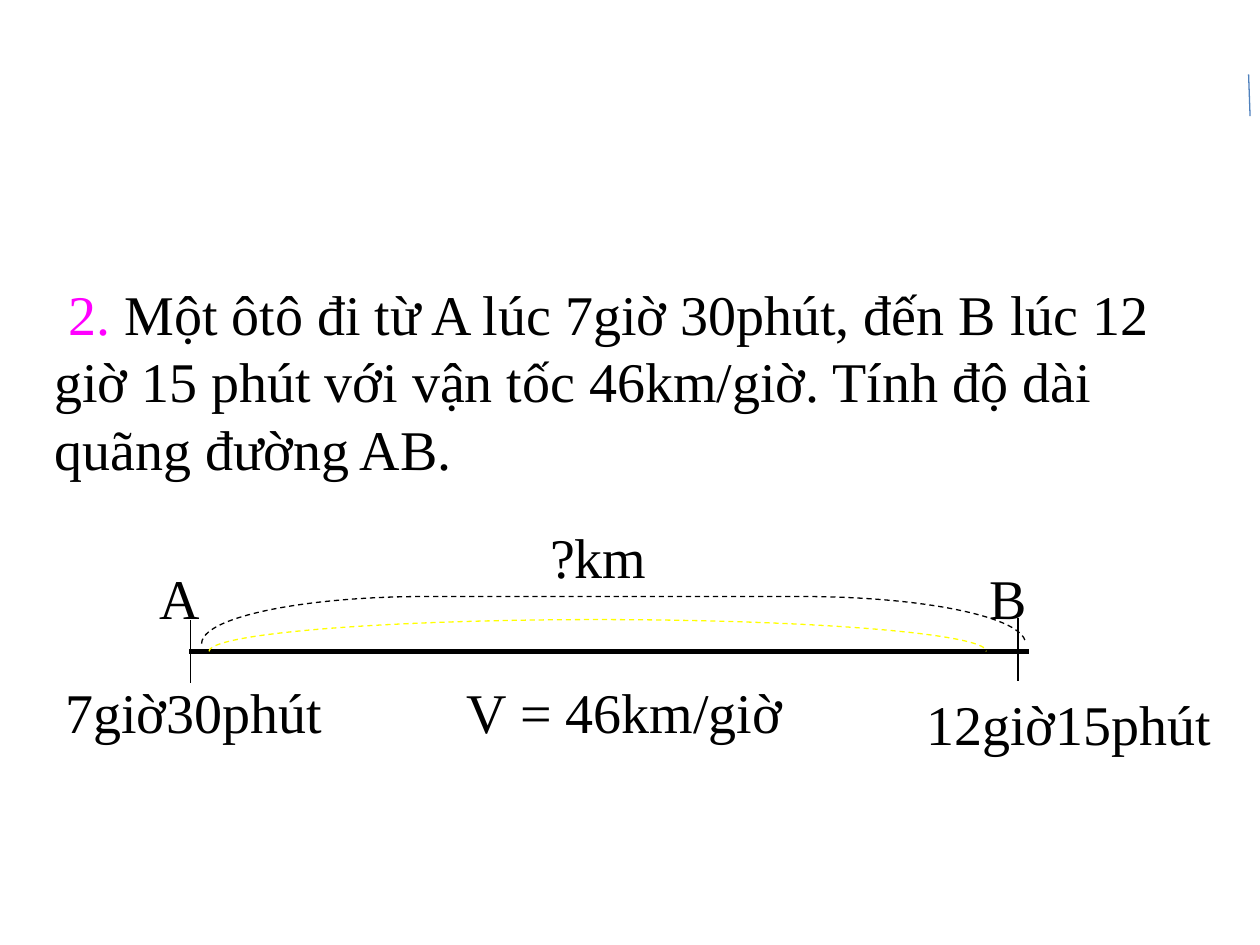
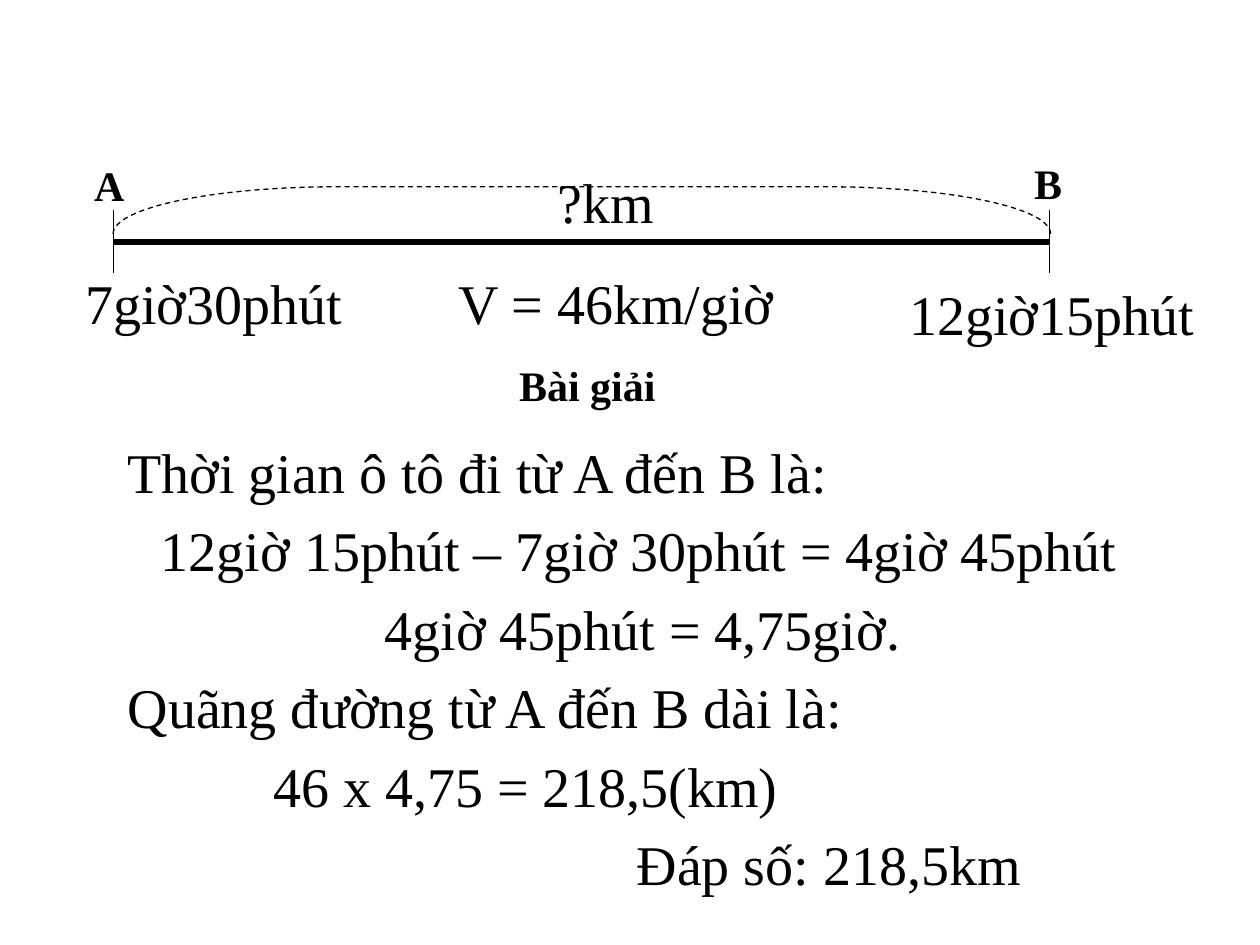
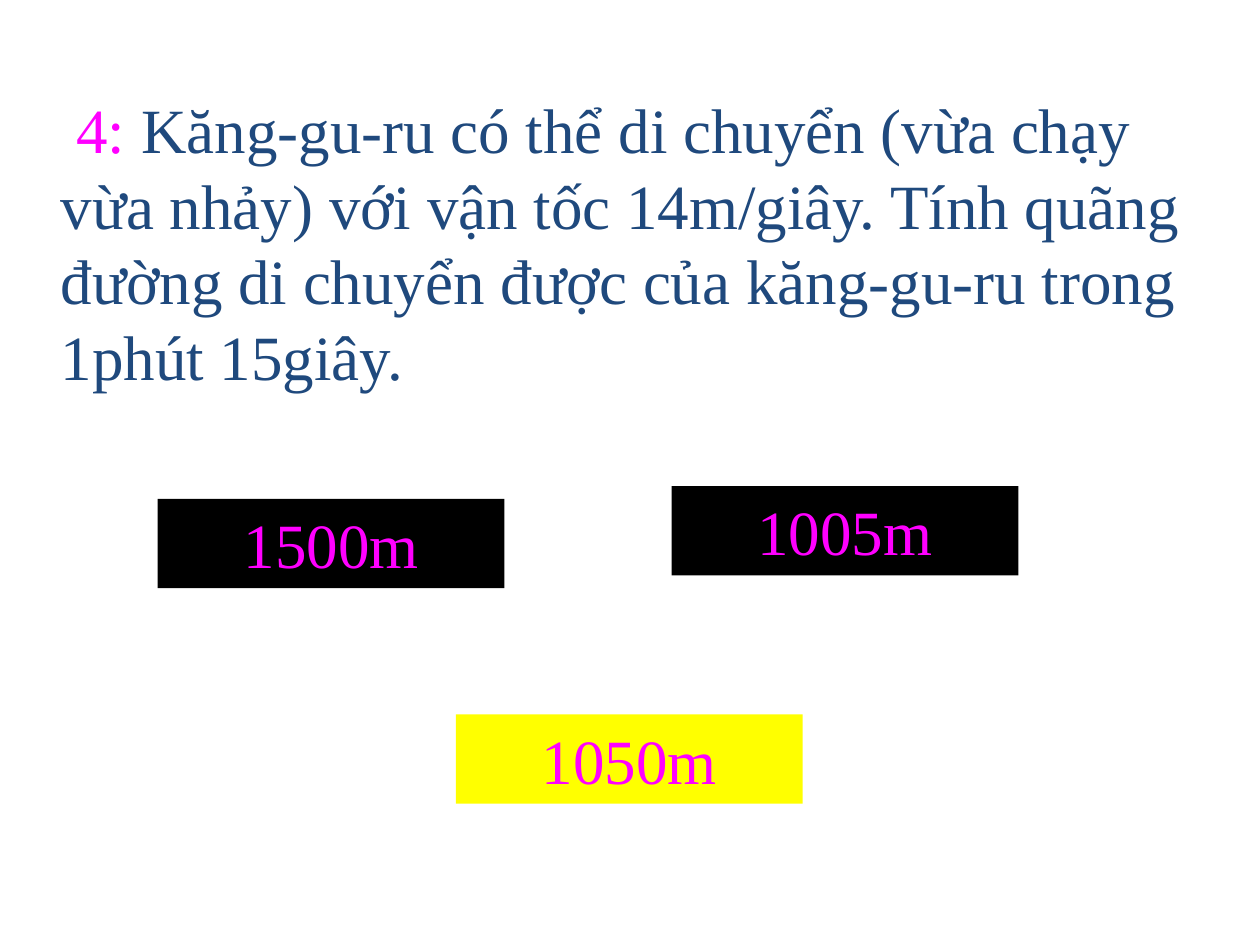
from dataclasses import dataclass

from lxml.etree import SubElement
from pptx import Presentation
from pptx.dml.color import RGBColor as Rgb
from pptx.enum.dml import MSO_LINE_DASH_STYLE as Dash
from pptx.enum.shapes import MSO_CONNECTOR_TYPE as Link, MSO_SHAPE as Kind
from pptx.enum.text import MSO_ANCHOR as Anchor, MSO_AUTO_SIZE as Fit, PP_ALIGN as Align
from pptx.oxml.ns import qn
from pptx.util import Cm, Pt


@dataclass(frozen=True)
class Theme:
    font: str = "Times New Roman"
    ink: str = "000000"
    pink: str = "FF00FF"
    navy: str = "1F497D"
    blue: str = "4F81BD"
    yellow: str = "FFFF00"
    small: int = 24
    text: int = 32
    large: int = 36
    thin: float = 0.75
    thick: float = 3
    gap: float = 6.4


LOOK = Theme()
LEFT, MID = Align.LEFT, Align.CENTER

ASK = {
    "runs": [
        (" 2. ", LOOK.pink),
        ("Một ôtô đi từ A lúc 7giờ 30phút, đến B lúc 12 giờ 15 phút "
         "với vận tốc 46km/giờ. Tính độ dài quãng đường AB.", LOOK.ink),
    ],
    "box": (0.84, 5.51, 24.33, 4.37),
    "size": LOOK.text,
}
ROUTE = {
    "road": (3.81, 20.75, 13.13),
    "ticks": [(3.84, 12.5), (20.52, 12.45)],
    "arcs": [
        (12.05, 12.81, 15.67, 0.64, 7.83, LOOK.yellow),
        (12.37, 12.5, 16.61, 0.95, 4.51, LOOK.ink),
    ],
    "ends": [("A", 2.97, 11.23), ("B", 19.69, 11.23)],
    "mark": {"size": LOOK.text, "bold": False},
    "notes": [
        ("7giờ30phút", 1.07, 13.54, 6.15, LEFT),
        ("12giờ15phút", 18.42, 13.77, 6.55, LEFT),
        ("V = 46km/giờ", 8.46, 13.54, 8.26, MID),
        ("?km", 8.79, 10.41, 6.55, MID),
    ],
}
EDGE = (25.17, 1.5, 25.2, 2.34)

HEAD = {
    "runs": [("Bài giải", LOOK.ink)],
    "box": (10.21, 7.11, 4.45, 1.27),
    "size": LOOK.small,
    "bold": True,
}
SOLVED = {
    "road": (2.29, 21.16, 4.88),
    "ticks": [(2.29, 4.24), (21.16, 4.24)],
    "arcs": [(11.73, 4.24, 18.9, 0.95, 4.51, LOOK.ink)],
    "ends": [("A", 1.65, 3.1), ("B", 20.6, 3.05)],
    "mark": {"size": LOOK.small, "bold": True},
    "notes": [
        ("7giờ30phút", 1.47, 5.28, 6.15, LEFT),
        ("12giờ15phút", 18.08, 5.51, 7.32, LEFT),
        ("V = 46km/giờ", 8.76, 5.28, 7.32, MID),
        ("?km", 8.56, 3.25, 7.32, MID),
    ],
}
STEPS = [
    ("Thời gian ô tô đi từ A đến B là:", 0.85),
    ("12giờ 15phút – 7giờ 30phút = 4giờ 45phút", 1.52),
    ("4giờ 45phút = 4,75giờ.", 6.03),
    ("Quãng đường từ A đến B dài là:", 0.85),
    ("46 x 4,75 = 218,5(km)", 3.78),
    ("Đáp số: 218,5km", 11.11),
]
STEP_BOX = (1.47, 8.69, 23.93, 9.96)

QUIZ = {
    "runs": [
        (" 4: ", LOOK.pink),
        ("Kăng-gu-ru có thể di chuyển (vừa chạy vừa nhảy) với vận tốc 14m/giây. "
         "Tính quãng đường di chuyển được của kăng-gu-ru trong 1phút 15giây.", LOOK.navy),
    ],
    "box": (0.97, 1.7, 23.7, 6.4),
    "size": LOOK.large,
}
PICKS = [
    ("1500m", 3.18, 10.06, LOOK.ink),
    ("1005m", 13.54, 9.8, LOOK.ink),
    ("1050m", 9.19, 14.4, LOOK.yellow),
]
PICK_SIZE = (6.99, 1.8)


def apply(item, **values):
    for name, value in values.items():
        setattr(item, name, value)


def place(shape, box):
    for name, value in zip(("left", "top", "width", "height"), box):
        setattr(shape, name, Cm(value))


def write(para, runs, size, bold=False, align=LEFT):
    para.alignment = align
    for words, tint in runs:
        run = para.add_run()
        run.text = words
        apply(run.font, name=LOOK.font, size=Pt(size), bold=bold)
        run.font.color.rgb = Rgb.from_string(tint)


def frame(shape, anchor=Anchor.TOP):
    apply(shape.text_frame, word_wrap=True, auto_size=Fit.NONE, vertical_anchor=anchor)
    return shape.text_frame


def title(slide, runs, box, size, bold=False):
    shape = slide.shapes.title
    place(shape, box)
    write(frame(shape).paragraphs[0], runs, size, bold)


def label(slide, words, box, size=LOOK.text, bold=False, align=LEFT):
    shape = slide.shapes.add_textbox(*map(Cm, box))
    write(frame(shape).paragraphs[0], [(words, LOOK.ink)], size, bold, align)


def line(slide, ends, width=LOOK.thin, tint=LOOK.ink):
    link = slide.shapes.add_connector(Link.STRAIGHT, *map(Cm, ends))
    link.line.width = Pt(width)
    link.line.color.rgb = Rgb.from_string(tint)
    SubElement(link._element.spPr, qn("a:effectLst"))


def arc(slide, x, y, span, rise, curve, tint):
    box = (x - rise / 2, y - span / 2, rise, span)
    shape = slide.shapes.add_shape(Kind.RIGHT_BRACKET, *map(Cm, box))
    shape.rotation = 270
    shape.adjustments[0] = curve / rise
    shape.shadow.inherit = False
    shape.fill.background()
    apply(shape.line, width=Pt(LOOK.thin), dash_style=Dash.DASH)
    shape.line.color.rgb = Rgb.from_string(tint)


def trip(slide, road, ticks, arcs, ends, mark, notes):
    start, end, y = road
    line(slide, (start, y, end, y), LOOK.thick)
    for x, top in ticks:
        line(slide, (x, top, x, top + 1.27))
    for bow in arcs:
        arc(slide, *bow)
    for words, x, top in ends:
        label(slide, words, (x, top, 1.27, 1.6), **mark)
    for words, x, top, width, align in notes:
        label(slide, words, (x, top, width, 1.6), align=align)


def steps(slide):
    body = slide.placeholders[1]
    place(body, STEP_BOX)
    text = frame(body)
    for rank, (words, indent) in enumerate(STEPS):
        para = text.add_paragraph() if rank else text.paragraphs[0]
        write(para, [(words, LOOK.ink)], LOOK.text)
        para.space_before = Pt(LOOK.gap)
        props = para._p.get_or_add_pPr()
        props.set("marL", str(Cm(indent)))
        props.set("indent", "0")
        SubElement(props, qn("a:buNone"))


def pick(slide, words, x, y, tint):
    shape = slide.shapes.add_shape(Kind.RECTANGLE, *map(Cm, (x, y, *PICK_SIZE)))
    shape.shadow.inherit = False
    shape.fill.solid()
    shape.fill.fore_color.rgb = Rgb.from_string(tint)
    shape.line.fill.background()
    para = frame(shape, Anchor.MIDDLE).paragraphs[0]
    write(para, [(words, LOOK.pink)], LOOK.large, align=MID)


def main():
    deck = Presentation()
    apply(deck, slide_width=Cm(25.4), slide_height=Cm(19.05))
    first, second, third = (
        deck.slides.add_slide(deck.slide_layouts[kind]) for kind in (5, 1, 5)
    )

    title(first, **ASK)
    trip(first, **ROUTE)
    line(first, EDGE, tint=LOOK.blue)

    title(second, **HEAD)
    steps(second)
    trip(second, **SOLVED)

    title(third, **QUIZ)
    for choice in PICKS:
        pick(third, *choice)

    deck.save("out.pptx")


if __name__ == "__main__":
    main()
